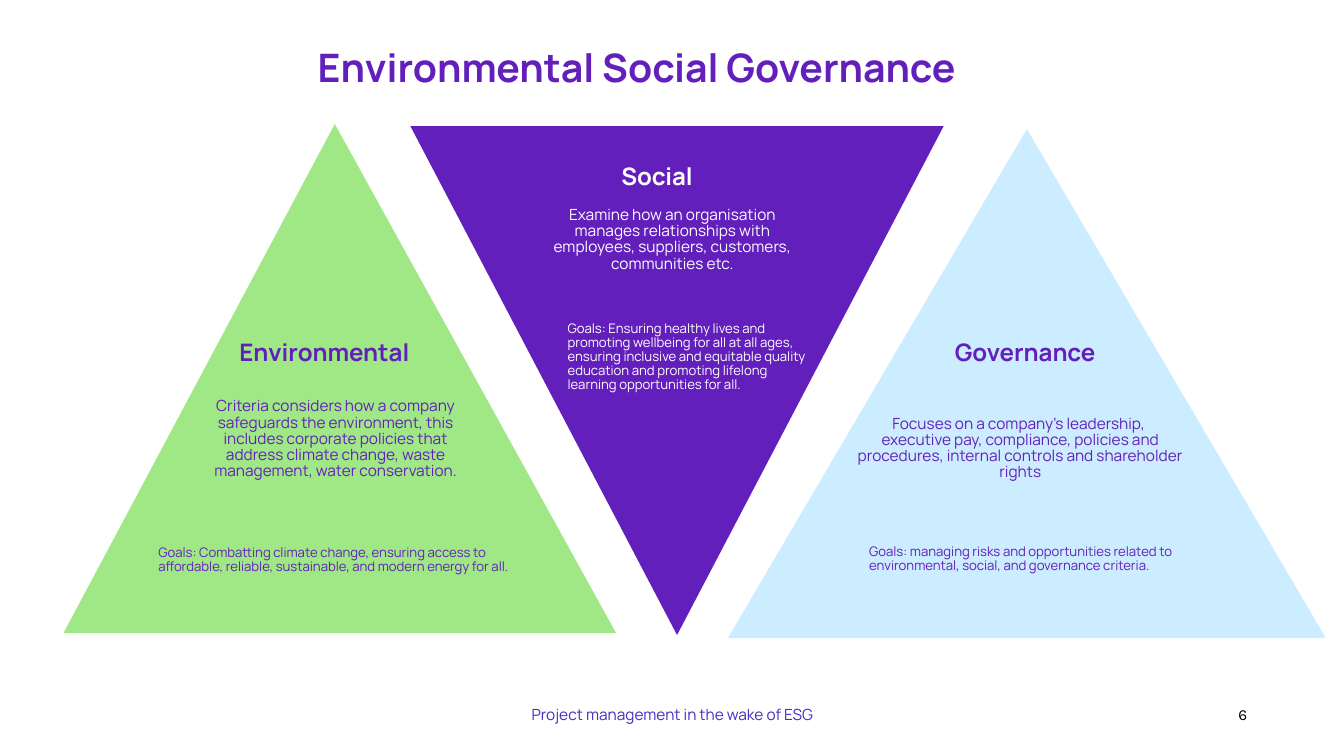
from pptx import Presentation
from pptx.dml.color import RGBColor
from pptx.enum.shapes import MSO_SHAPE
from pptx.enum.text import MSO_ANCHOR, MSO_AUTO_SIZE, PP_ALIGN
from pptx.util import Inches, Pt

PURPLE = RGBColor(0x62, 0x1F, 0xBB)
INDIGO = RGBColor(0x40, 0x2F, 0xBF)
GREEN = RGBColor(0xA0, 0xE8, 0x86)
SKY = RGBColor(0xCC, 0xEC, 0xFF)
WHITE = RGBColor(0xFF, 0xFF, 0xFF)
BLACK = RGBColor(0, 0, 0)

HEADING = {"size": Pt(17.2), "bold": True}
CRITERIA = {"size": Pt(11)}
GOALS = {"size": Pt(9.4)}


class PillarSlide:
    """Holds the deck style and the slide being built."""

    font_name = "Manrope"
    line_spacing = 0.88

    def __init__(self, deck):
        self.slide = deck.slides.add_slide(deck.slide_layouts[5])

    def fill_frame(self, frame, lines, font_values, align, inset, anchor, spacing):
        frame_values = {"word_wrap": True, "vertical_anchor": anchor}
        for side in ("left", "right", "top", "bottom"):
            frame_values[f"margin_{side}"] = Inches(inset)
        for key, value in frame_values.items():
            setattr(frame, key, value)
        frame.text = "\n".join(lines)
        for paragraph in frame.paragraphs:
            paragraph.alignment = align
            paragraph.line_spacing = spacing
            for run in paragraph.runs:
                for key, value in {"name": self.font_name, **font_values}.items():
                    if key == "color":
                        run.font.color.rgb = value
                    else:
                        setattr(run.font, key, value)

    def title(self, place, wording):
        heading = self.slide.shapes.title
        heading.left, heading.top, heading.width, heading.height = map(Inches, place)
        heading.text_frame.auto_size = MSO_AUTO_SIZE.NONE
        values = {"size": Pt(28), "bold": True, "color": PURPLE}
        self.fill_frame(heading.text_frame, [wording], values, PP_ALIGN.LEFT,
                        0.1, MSO_ANCHOR.MIDDLE, 1.0)

    def triangle(self, place, fill, rotation=0, apex=0.5):
        pillar = self.slide.shapes.add_shape(
            MSO_SHAPE.ISOSCELES_TRIANGLE, *map(Inches, place))
        pillar.adjustments[0] = apex
        pillar.rotation = rotation
        pillar.shadow.inherit = False
        pillar.fill.solid()
        pillar.fill.fore_color.rgb = fill
        pillar.line.fill.background()

    def text(self, place, lines, values, align=PP_ALIGN.CENTER):
        frame = self.slide.shapes.add_textbox(*map(Inches, place)).text_frame
        frame.auto_size = MSO_AUTO_SIZE.SHAPE_TO_FIT_TEXT
        self.fill_frame(frame, lines, values, align, 0.04, MSO_ANCHOR.MIDDLE,
                        self.line_spacing)

    def footer(self, place, wording, values, align):
        frame = self.slide.shapes.add_textbox(*map(Inches, place)).text_frame
        self.fill_frame(frame, [wording], {"size": Pt(11), **values}, align,
                        0.05, MSO_ANCHOR.TOP, 1.0)


PILLARS = [
    {
        "triangle": ((0.63, 1.23, 5.48, 5.05), GREEN, 0, 0.491),
        "ink": PURPLE,
        "heading": ((2.2, 3.33, 2.08, 0.37), ["Environmental "]),
        "criteria": ((1.95, 3.86, 2.76, 1), [
            "Criteria considers how a company safeguards the environment, "
            "this includes corporate policies that address climate change, "
            "waste management, water conservation."]),
        "goals": ((1.53, 5.28, 3.68, 0.55), [
            "Goals: Combatting climate change, ensuring access to affordable, "
            "reliable, sustainable, and modern energy for all."]),
    },
    {
        "triangle": ((7.22, 1.28, 5.93, 5.05), SKY),
        "ink": PURPLE,
        "heading": ((9.15, 3.33, 2.08, 0.37), ["Governance "]),
        "criteria": ((8.35, 4.04, 3.54, 0.82), [
            "Focuses on a company’s leadership, ",
            "executive pay, compliance, policies and procedures, "
            "internal controls and shareholder rights"]),
        "goals": ((8.58, 5.35, 3.31, 0.4), [
            "Goals: managing risks and opportunities related to "
            "environmental, social, and governance criteria."]),
    },
    {
        "triangle": ((4.07, 1.25, 5.29, 5.05), PURPLE, 180),
        "ink": WHITE,
        "heading": ((5.5, 1.58, 2.08, 0.37), ["Social "]),
        "criteria": ((5.35, 1.97, 2.64, 0.82), [
            "Examine how an organisation",
            "manages relationships with",
            "employees, suppliers, customers, communities etc."]),
        "goals": ((5.59, 3.03, 2.44, 1.03), [
            "Goals: Ensuring healthy lives and promoting wellbeing for all at "
            "all ages, ensuring inclusive and equitable quality education and "
            "promoting lifelong learning opportunities for all."]),
    },
]


def main():
    deck = Presentation()
    deck.slide_width, deck.slide_height = Inches(13.33), Inches(7.5)
    page = PillarSlide(deck)
    page.title((3.05, 0.23, 7.88, 0.86), "Environmental Social Governance")
    for pillar in PILLARS:
        ink = {"color": pillar["ink"]}
        page.triangle(*pillar["triangle"])
        page.text(*pillar["heading"], {**HEADING, **ink})
        page.text(*pillar["criteria"], {**CRITERIA, **ink})
        page.text(*pillar["goals"], {**GOALS, **ink}, PP_ALIGN.LEFT)
    page.footer((9.42, 6.95, 3, 0.4), "6",
                {"name": "Karla", "color": BLACK}, PP_ALIGN.RIGHT)
    page.footer((4.42, 6.95, 4.5, 0.4), "Project management in the wake of ESG",
                {"color": INDIGO}, PP_ALIGN.CENTER)
    deck.save("out.pptx")


if __name__ == "__main__":
    main()
